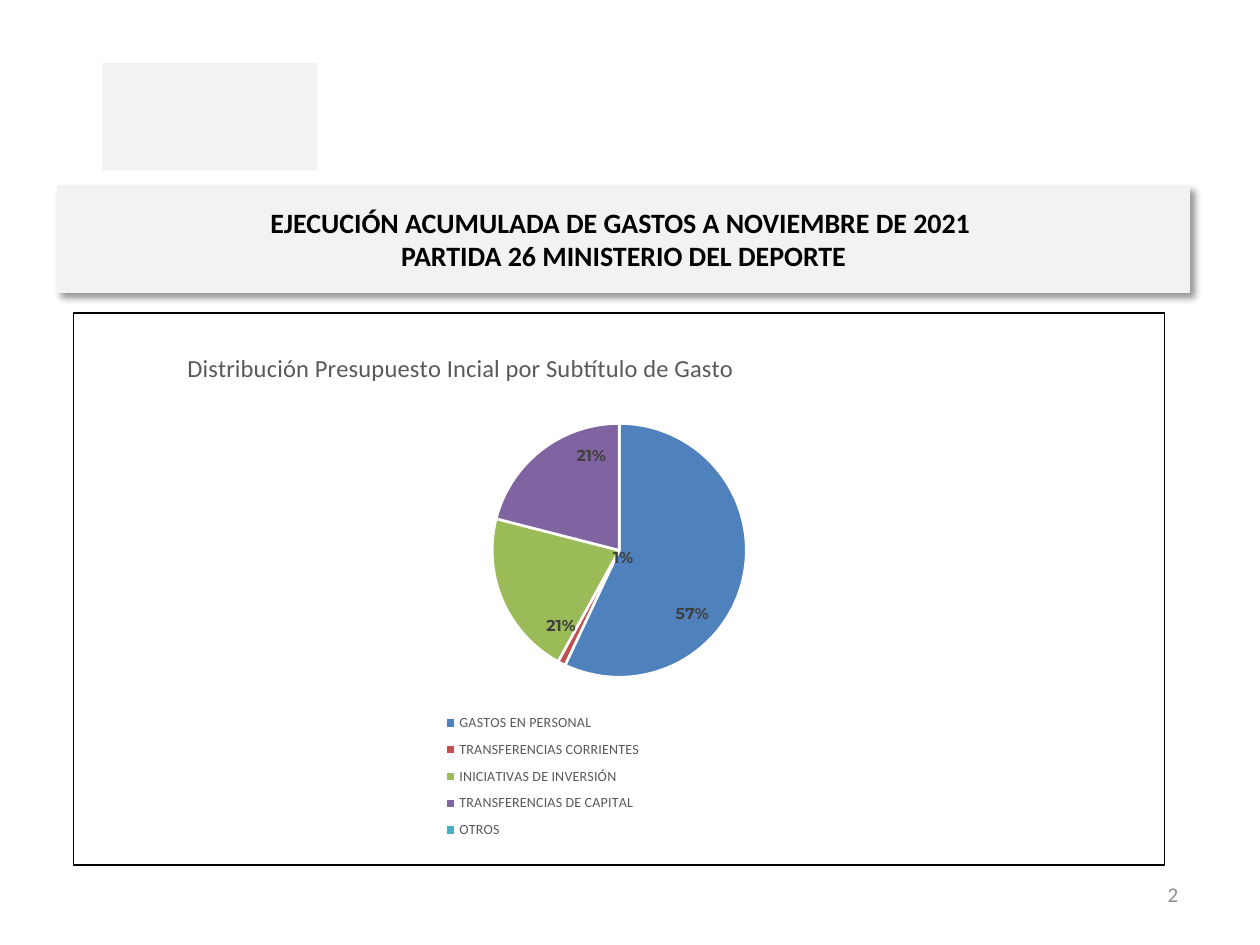
import pptx
import pptx.chart.data
import pptx.dml.color
import pptx.enum.chart
import pptx.enum.shapes
import pptx.enum.text
import pptx.oxml
import pptx.oxml.ns
import pptx.util
from pptx.util import Inches

RGBColor = pptx.dml.color.RGBColor
WHITE = RGBColor(0xFF, 0xFF, 0xFF)
BLACK = RGBColor(0, 0, 0)
PALE_GRAY = RGBColor(0xF2, 0xF2, 0xF2)
NUMBER_GRAY = RGBColor(0x8C, 0x8C, 0x8C)
TEXT_GRAY = RGBColor(0x59, 0x59, 0x59)
LABEL_GRAY = RGBColor(0x40, 0x40, 0x40)

EXPENSES = [
    ("GASTOS EN PERSONAL", 57, RGBColor(0x4F, 0x81, 0xBD), (0.01, 0.09)),
    ("TRANSFERENCIAS CORRIENTES", 1, RGBColor(0xC0, 0x50, 0x4D), (0.03, -0.09)),
    ("INICIATIVAS DE INVERSIÓN", 21, RGBColor(0x9B, 0xBB, 0x59), (0, 0.09)),
    ("TRANSFERENCIAS DE CAPITAL", 21, RGBColor(0x80, 0x64, 0xA2), (0.01, -0.08)),
    ("OTROS", 0, RGBColor(0x4B, 0xAC, 0xC6), None),
]


def parse(xml):
    """Return an element from XML that uses the a, c and r prefixes."""
    tag, rest = xml.split(">", 1)
    closing = "/" if tag.endswith("/") else ""
    namespaces = pptx.oxml.ns.nsdecls("a", "c", "r")
    return pptx.oxml.parse_xml(f"{tag.rstrip('/')} {namespaces}{closing}>{rest}")


def style_font(font, size, color, name="Calibri", bold=False):
    """Set the main properties of a font."""
    font.size = pptx.util.Pt(size)
    font.color.rgb = color
    font.name = name
    font.bold = bold


def manual_layout(x, y, width=None, height=None, inner=False, edge=True):
    """Return a chart layout given in fractions of the chart."""
    target = '<c:layoutTarget val="inner"/>' if inner else ""
    modes = '<c:xMode val="edge"/><c:yMode val="edge"/>' if edge else ""
    size = "" if width is None else f'<c:w val="{width}"/><c:h val="{height}"/>'
    return parse(
        f"<c:layout><c:manualLayout>{target}{modes}"
        f'<c:x val="{x}"/><c:y val="{y}"/>{size}</c:manualLayout></c:layout>'
    )


def replace_layout(parent, layout, predecessor=None):
    """Put a layout in a chart part, after the named child or at the start."""
    for old_layout in parent.findall(pptx.oxml.ns.qn("c:layout")):
        parent.remove(old_layout)
    if predecessor is None:
        parent.insert(0, layout)
    else:
        parent.find(pptx.oxml.ns.qn(predecessor)).addnext(layout)


def add_emblem_block(slide, left, top, width, height):
    """Add a plain block in the upper left corner."""
    shape = slide.shapes.add_shape(
        pptx.enum.shapes.MSO_SHAPE.RECTANGLE, left, top, width, height
    )
    shape.shadow.inherit = False
    shape.fill.solid()
    shape.fill.fore_color.rgb = PALE_GRAY
    shape.line.fill.background()


def format_title(slide, left, top, width, height):
    """Fill the title placeholder and give it a shaded band."""
    title = slide.shapes.title
    title.left, title.top, title.width, title.height = left, top, width, height
    title.fill.solid()
    title.fill.fore_color.rgb = PALE_GRAY
    title.line.color.rgb = PALE_GRAY
    title.line.width = pptx.util.Pt(0.75)
    title._element.spPr.append(parse(
        '<a:effectLst><a:outerShdw blurRad="50800" dist="38100" dir="2700000" '
        'algn="tl" rotWithShape="0"><a:srgbClr val="000000"><a:alpha val="40000"/>'
        "</a:srgbClr></a:outerShdw></a:effectLst>"
    ))
    text_frame = title.text_frame
    text_frame.text = (
        "EJECUCIÓN ACUMULADA DE GASTOS A NOVIEMBRE DE 2021 \vPARTIDA 26 MINISTERIO DEL DEPORTE"
    )
    text_frame.vertical_anchor = pptx.enum.text.MSO_ANCHOR.MIDDLE
    paragraph = text_frame.paragraphs[0]
    paragraph.alignment = pptx.enum.text.PP_ALIGN.CENTER
    for run in paragraph.runs:
        style_font(run.font, 16, BLACK, bold=True)


def format_slices(series):
    """Color each slice and move its percentage label."""
    for index, (_, value, color, label_offset) in enumerate(EXPENSES):
        point = series.points[index]
        point.format.fill.solid()
        point.format.fill.fore_color.rgb = color
        point.format.line.color.rgb = WHITE
        point.format.line.width = pptx.util.Pt(1.5)
        label = point.data_label
        style_font(label.font, 9, LABEL_GRAY, "Montserrat", True)
        label.position = pptx.enum.chart.XL_LABEL_POSITION.CENTER
        label_element = series._element.find(
            f".//{pptx.oxml.ns.qn('c:dLbl')}[{index + 1}]"
        )
        for name, shown in (("showVal", 0), ("showPercent", int(value > 0)),
                            ("showLegendKey", 0)):
            label_element.find(pptx.oxml.ns.qn(f"c:{name}")).set("val", str(shown))
        if label_offset:
            replace_layout(
                label_element, manual_layout(*label_offset, edge=False), "c:idx"
            )


def add_expense_chart(slide, left, top, width, height):
    """Add the pie chart of the budget by type of expense."""
    chart_data = pptx.chart.data.CategoryChartData()
    chart_data.categories = [expense[0] for expense in EXPENSES]
    chart_data.add_series("Presupuesto", [expense[1] for expense in EXPENSES])
    chart = slide.shapes.add_chart(
        pptx.enum.chart.XL_CHART_TYPE.PIE, left, top, width, height, chart_data
    ).chart
    style_font(chart.font, 10, BLACK)
    chart._chartSpace.chart.addnext(parse(
        '<c:spPr><a:solidFill><a:srgbClr val="FFFFFF"/></a:solidFill><a:ln w="9525">'
        '<a:solidFill><a:srgbClr val="000000"/></a:solidFill></a:ln></c:spPr>'
    ))
    chart.has_title = True
    title_frame = chart.chart_title.text_frame
    title_frame.text = "Distribución Presupuesto Incial por Subtítulo de Gasto"
    style_font(title_frame.paragraphs[0].runs[0].font, 14, TEXT_GRAY)
    replace_layout(chart.chart_title._element, manual_layout(0.1, 0.06), "c:tx")
    chart.has_legend = True
    chart.legend.position = pptx.enum.chart.XL_LEGEND_POSITION.BOTTOM
    chart.legend.include_in_layout = False
    style_font(chart.legend.font, 8, TEXT_GRAY)
    replace_layout(
        chart.legend._element, manual_layout(0.32, 0.71, 0.22, 0.26), "c:legendPos"
    )
    plot_area = chart._chartSpace.chart.plotArea
    replace_layout(plot_area, manual_layout(0, 0.2, 1, 0.46, inner=True))
    chart.plots[0].vary_by_categories = True
    format_slices(chart.plots[0].series[0])


def add_slide_number(slide, left, top, width, height):
    """Add the slide number field at the lower right."""
    text_frame = slide.shapes.add_textbox(left, top, width, height).text_frame
    text_frame.word_wrap = True
    text_frame.vertical_anchor = pptx.enum.text.MSO_ANCHOR.MIDDLE
    paragraph = text_frame.paragraphs[0]
    paragraph.alignment = pptx.enum.text.PP_ALIGN.RIGHT
    paragraph._p.append(parse(
        '<a:fld id="{B6F15528-21DE-4FAA-801E-634DDDAF4B2B}" type="slidenum">'
        f'<a:rPr lang="es-CL" sz="1200"><a:solidFill><a:srgbClr val="{NUMBER_GRAY}"/>'
        '</a:solidFill><a:latin typeface="Calibri"/></a:rPr><a:t>2</a:t></a:fld>'
    ))


def main():
    """Build and save the presentation."""
    presentation = pptx.Presentation()
    presentation.slide_width = Inches(10)
    presentation.slide_height = Inches(7.5)
    presentation._element.set("firstSlideNum", "2")
    slide = presentation.slides.add_slide(presentation.slide_layouts[5])
    add_emblem_block(slide, Inches(0.81), Inches(0.5), Inches(1.71), Inches(0.85))
    format_title(slide, Inches(0.46), Inches(1.47), Inches(8.98), Inches(0.85))
    add_slide_number(slide, Inches(7.12), Inches(6.9), Inches(2.33), Inches(0.4))
    add_expense_chart(slide, Inches(0.58), Inches(2.48), Inches(8.67), Inches(4.39))
    presentation.save("out.pptx")


if __name__ == "__main__":
    main()
